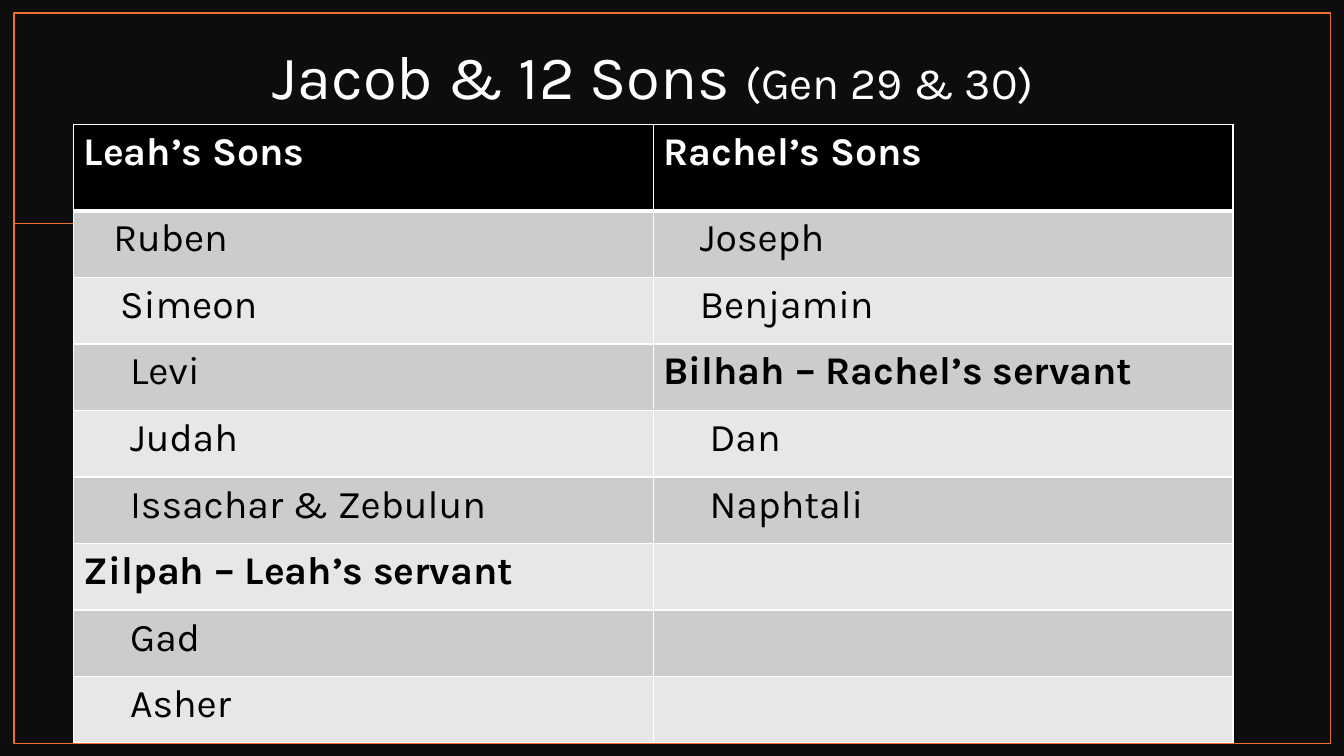
from pptx import Presentation
from pptx.dml.color import RGBColor
from pptx.enum.shapes import MSO_CONNECTOR, MSO_SHAPE
from pptx.enum.text import MSO_ANCHOR, MSO_AUTO_SIZE, PP_ALIGN
from pptx.oxml.ns import qn
from pptx.util import Pt
from lxml.etree import SubElement

# Content: (text, indent in points); headings have no indent
TITLE = [("Jacob & 12 Sons ", 44), ("(Gen 29 & 30)", 32)]
ROWS = [
    (("Leah’s Sons", 0), ("Rachel’s Sons", 0)),
    (("Ruben", 21), ("Joseph", 26)),
    (("Simeon", 26), ("Benjamin", 26)),
    (("Levi", 33), ("Bilhah – Rachel’s servant", 0)),
    (("Judah", 33), ("Dan", 33)),
    (("Issachar & Zebulun", 33), ("Naphtali", 33)),
    (("Zilpah – Leah’s servant", 0), ("", 0)),
    (("Gad", 33), ("", 0)),
    (("Asher", 33), ("", 0)),
]

# Format
WIDTH, HEIGHT = 960, 540
LEFT, TABLE_W = 52.7, 828
HEAD_H, ROW_H = 61.7, 47.52
DARK, ORANGE, WHITE, BLACK = "0D0D0D", "E97132", "FFFFFF", "000000"
BANDS = ["E7E7E7", "CCCCCC"]


def color(value):
    return RGBColor.from_string(value)


def add_run(p, text, size, ink, bold=False):
    r = p.add_run()
    r.text = text
    for name, value in dict(name="Karla", size=Pt(size), bold=bold).items():
        setattr(r.font, name, value)
    r.font.color.rgb = color(ink)


def add_rect(s, x, y, w, h, fill=None, line=None):
    sp = s.shapes.add_shape(MSO_SHAPE.RECTANGLE, Pt(x), Pt(y), Pt(w), Pt(h))
    sp.shadow.inherit = False
    for part, value in ((sp.fill, fill), (sp.line.fill, line)):
        if value:
            part.solid()
            part.fore_color.rgb = color(value)
        else:
            part.background()
    if line:
        sp.line.width = Pt(1)
    return sp


def add_borders(cell, widths):
    tc_pr = cell._tc.get_or_add_tcPr()
    for side, width in widths.items():
        ln = SubElement(tc_pr, qn(f"a:ln{side}"), w=str(Pt(width)))
        SubElement(SubElement(ln, qn("a:solidFill")), qn("a:srgbClr"), val=WHITE)


prs = Presentation()
prs.slide_width, prs.slide_height = Pt(WIDTH), Pt(HEIGHT)
s = prs.slides.add_slide(prs.slide_layouts[5])

# Title on a dark backdrop
title = s.shapes.title
backdrop = add_rect(s, 0, 0, WIDTH, HEIGHT, fill=DARK)
title.element.addprevious(backdrop.element)
box = dict(left=LEFT, top=27.4, width=TABLE_W, height=56.9)
for name, value in box.items():
    setattr(title, name, Pt(value))
tf = title.text_frame
frame = dict(word_wrap=True, auto_size=MSO_AUTO_SIZE.NONE,
             vertical_anchor=MSO_ANCHOR.BOTTOM)
for name, value in frame.items():
    setattr(tf, name, value)
p = tf.paragraphs[0]
p.alignment, p.line_spacing = PP_ALIGN.CENTER, 0.9
for text, size in TITLE:
    add_run(p, text, size, WHITE)

# Side rule
rule = s.shapes.add_connector(MSO_CONNECTOR.STRAIGHT,
                              Pt(421), Pt(159.8), Pt(10), Pt(159.8))
rule.line.color.rgb = color(ORANGE)
rule.line.width = Pt(1)
SubElement(rule.element.spPr, qn("a:effectLst"))

# Table of sons
table = s.shapes.add_table(len(ROWS), 2, Pt(LEFT), Pt(89), Pt(TABLE_W),
                           Pt(HEAD_H + ROW_H * (len(ROWS) - 1))).table
for i, row in enumerate(ROWS):
    table.rows[i].height = Pt(ROW_H if i else HEAD_H)
    for j, (text, indent) in enumerate(row):
        cell = table.cell(i, j)
        add_borders(cell, dict(L=1, R=1, T=3 if i == 1 else 1,
                               B=1 if i else 3))
        cell.fill.solid()
        cell.fill.fore_color.rgb = color(BANDS[i % 2] if i else BLACK)
        if text:
            p = cell.text_frame.paragraphs[0]
            p._p.get_or_add_pPr().set("marL", str(Pt(indent)))
            add_run(p, text, 28, BLACK if i else WHITE, bold=not indent)

# Frame
add_rect(s, 10, 9.2, 940.3, 522, line=ORANGE)

prs.save("out.pptx")
